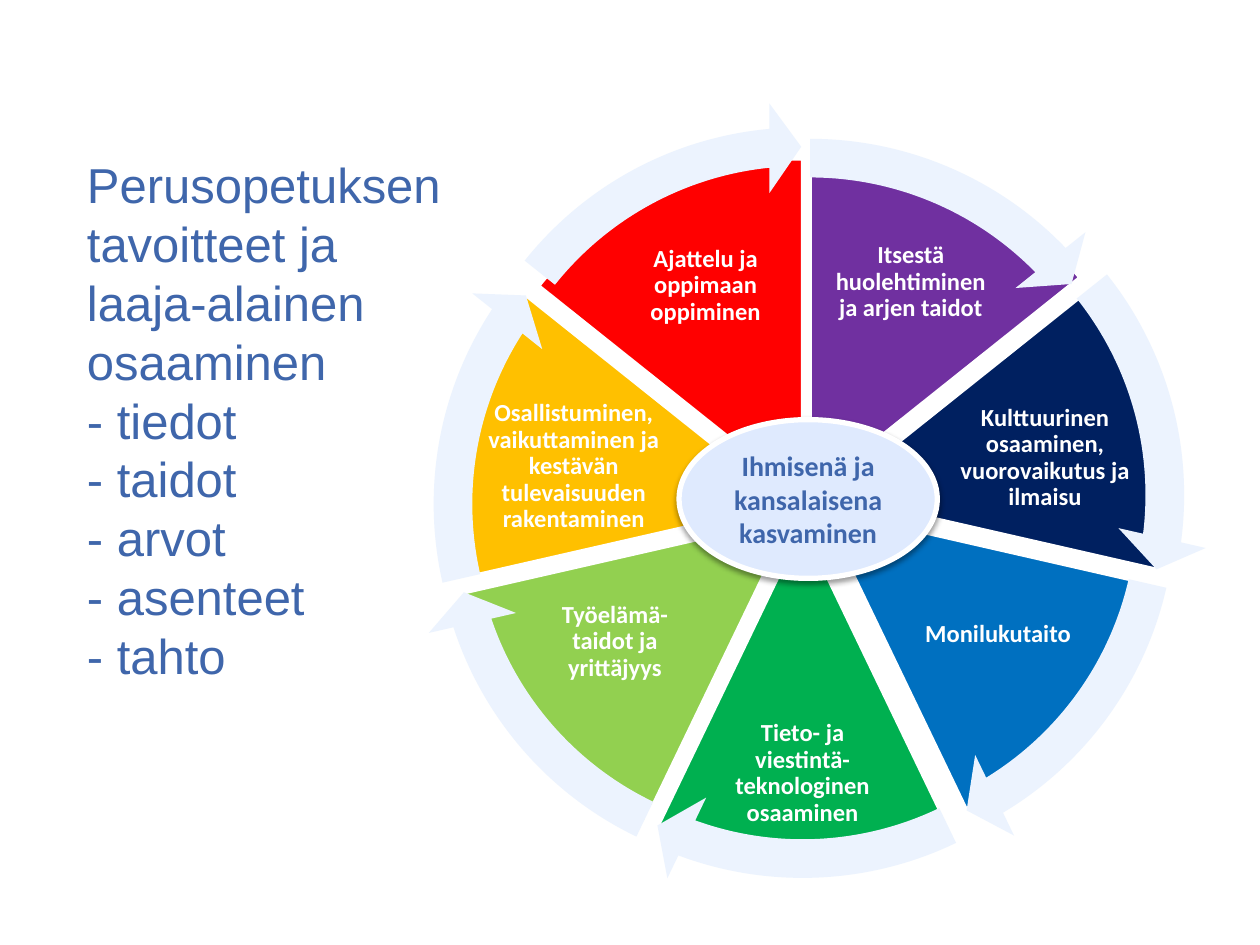
from lxml.etree import SubElement
from pptx import Presentation
from pptx.dml.color import RGBColor
from pptx.enum.shapes import MSO_SHAPE
from pptx.enum.text import MSO_ANCHOR, MSO_AUTO_SIZE, PP_ALIGN
from pptx.oxml.ns import qn
from pptx.util import Pt

COLORS = {
    "blue": "3F66AB", "white": "FFFFFF", "arrow": "ECF3FE", "hub": "DFEAFE",
    "purple": "7030A0", "navy": "002060", "azure": "0070C0", "green": "00B050",
    "lime": "92D050", "amber": "FFC000", "red": "FF0000", "shadow": "000000",
}

TITLE = ["Perusopetuksen tavoitteet ja laaja-alainen osaaminen",
         "- tiedot", "- taidot", "- arvot", "- asenteet", "- tahto"]

# Clockwise from the top: colour, pie box, label box, label lines, arrow position
SECTORS = [
    ("purple", (262.8, 88.6, 400.3, 386), (473, 124.6, 95, 73.4),
     ["Itsestä huolehtiminen ja arjen taidot"], (246.2, 64.8)),
    ("navy", (282.2, 90, 386, 386), (544.3, 229.7, 105.8, 64.1),
     ["Kulttuurinen osaaminen, vuorovaikutus ja ilmaisu"], (257.8, 66.2)),
    ("azure", (276.5, 97.9, 386, 386), (524.2, 326.9, 92.2, 71.3),
     ["Monilukutaito"], (252.7, 74.2)),
    ("green", (265.7, 107.3, 386, 386), (414, 410.4, 89.3, 64.1),
     ["Tieto- ja viestintä-teknologinen osaaminen"], (241.9, 82.8)),
    ("lime", (259.2, 103, 386, 386), (305.3, 331.2, 92.2, 71.3),
     ["Työelämä-", "taidot ja yrittäjyys"], (234.7, 79.2)),
    ("amber", (257, 95, 386, 386), (275, 234.7, 105.8, 64.1),
     ["Osallistuminen, vaikuttaminen ja kestävän tulevaisuuden rakentaminen"],
     (233.3, 71.3)),
    ("red", (265.7, 90.7, 386, 386), (357.1, 126.7, 92.2, 73.4),
     ["Ajattelu ja oppimaan oppiminen"], (241.2, 58.3)),
]
# Angles in the units of the shape adjustments: a full turn is 216
TURN, TOP = 216, 162
STEP = TURN / len(SECTORS)
ARROW_SIZE = 433.4
ARROW_HEAD = 3.28


def rgb(name):
    return RGBColor.from_string(COLORS[name])


def write_lines(p, lines, size, font, color, bold=False):
    """Write lines as runs parted by line breaks."""
    for i, line in enumerate(lines):
        if i:
            p.add_line_break()
        r = p.add_run()
        r.text = line
        r.font.size, r.font.name, r.font.bold = Pt(size), font, bold
        r.font.color.rgb = rgb(color)


def add_filled(shapes, kind, box, fill, line_width=0, adjustments=()):
    s = shapes.add_shape(kind, *map(Pt, box))
    s.shadow.inherit = False
    for i, value in enumerate(adjustments):
        s.adjustments[i] = value
    s.fill.solid()
    s.fill.fore_color.rgb = rgb(fill)
    if line_width:
        s.line.color.rgb = rgb("white")
        s.line.width = Pt(line_width)
    else:
        s.line.fill.background()
    return s


def add_label(shapes, box, lines, anchor):
    tf = shapes.add_textbox(*map(Pt, box)).text_frame
    tf.word_wrap = True
    tf.vertical_anchor = anchor
    tf.margin_left = tf.margin_right = tf.margin_top = tf.margin_bottom = Pt(1.4)
    p = tf.paragraphs[0]
    p.alignment = PP_ALIGN.CENTER
    p.line_spacing = 0.9
    write_lines(p, lines, 14, "Calibri", "white", True)


def add_shadow(s):
    effects = s._element.spPr.find(qn("a:effectLst"))
    shadow = SubElement(effects, qn("a:outerShdw"), blurRad=str(Pt(3.1)),
                        dist=str(Pt(1.6)), dir="5400000", rotWithShape="0")
    color = SubElement(shadow, qn("a:srgbClr"), val=COLORS["shadow"])
    SubElement(color, qn("a:alpha"), val="38000")


def add_title(slide):
    s = slide.shapes.title
    s.left, s.top, s.width, s.height = map(Pt, (42.5, 109.4, 222.5, 260.6))
    tf = s.text_frame
    tf.word_wrap = True
    tf.auto_size = MSO_AUTO_SIZE.NONE
    tf.vertical_anchor = MSO_ANCHOR.MIDDLE
    p = tf.paragraphs[0]
    p.alignment = PP_ALIGN.LEFT
    write_lines(p, TITLE, 28, "Arial", "blue")


def add_wheel(slide):
    shapes = slide.shapes.add_group_shape().shapes
    # Sectors with labels
    for i, (color, pie, label, lines, _) in enumerate(SECTORS):
        start, end = ((TOP + k * STEP) % TURN for k in (i, i + 1))
        add_filled(shapes, MSO_SHAPE.PIE, pie, color, 2, (start, end))
        anchor = MSO_ANCHOR.TOP if color == "green" else MSO_ANCHOR.MIDDLE
        add_label(shapes, label, lines, anchor)
    # Ring of arrows
    for i, (*_, position) in enumerate(SECTORS):
        start, end = ((TOP + k * STEP) % TURN for k in (i, i + 1))
        add_filled(shapes, MSO_SHAPE.CIRCULAR_ARROW,
                   (*position, ARROW_SIZE, ARROW_SIZE), "arrow",
                   adjustments=(0.051, 3.275, end - ARROW_HEAD, start, 0.059))


def add_hub(slide):
    s = add_filled(slide.shapes, MSO_SHAPE.OVAL, (388, 239.8, 147.6, 90.7), "hub", 3)
    add_shadow(s)
    tf = s.text_frame
    tf.word_wrap = True
    tf.vertical_anchor = MSO_ANCHOR.MIDDLE
    for i, line in enumerate(["Ihmisenä ja kansalaisena", "kasvaminen"]):
        p = tf.add_paragraph() if i else tf.paragraphs[0]
        p.alignment = PP_ALIGN.CENTER
        write_lines(p, [line], 16, "Calibri", "blue", True)


def main():
    prs = Presentation()
    prs.slide_width, prs.slide_height = Pt(720), Pt(540)
    slide = prs.slides.add_slide(prs.slide_layouts[5])
    add_title(slide)
    add_wheel(slide)
    add_hub(slide)
    prs.save("out.pptx")


if __name__ == "__main__":
    main()
